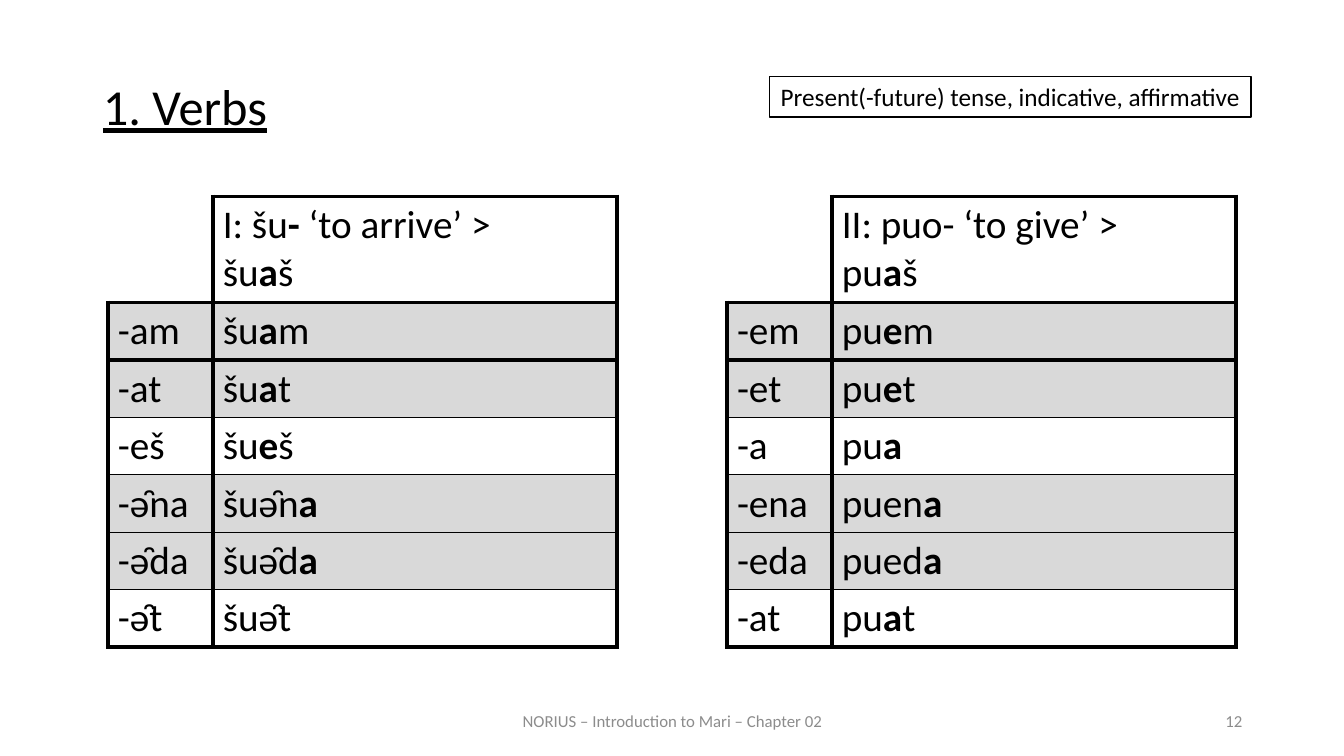
from lxml import etree
from pptx import Presentation
from pptx.dml.color import RGBColor
from pptx.enum.shapes import MSO_SHAPE
from pptx.enum.text import MSO_ANCHOR, PP_ALIGN
from pptx.oxml.ns import qn
from pptx.util import Inches, Pt

LEFT, MID, RIGHT, JUST = PP_ALIGN.LEFT, PP_ALIGN.CENTER, PP_ALIGN.RIGHT, PP_ALIGN.JUSTIFY
TOP, CENTER = MSO_ANCHOR.TOP, MSO_ANCHOR.MIDDLE
RECT = MSO_SHAPE.RECTANGLE

COLORS = {"ink": "000000", "paper": "FFFFFF", "shade": "D9D9D9", "foot": "8C8C8C"}
THICK, THIN = 3, 1
SHADED = {1, 2, 4, 5}

ARRIVE = [
    ("", "I: šu*-* ‘to arrive’ >\nšu*a*š"),
    ("-am", "šu*a*m"),
    ("-at", "šu*a*t"),
    ("-eš", "šu*e*š"),
    ("-ə̑na", "šuə̑n*a*"),
    ("-ə̑da", "šuə̑d*a*"),
    ("-ə̑t", "šuə̑t"),
]
GIVE = [
    ("", "II: puo- ‘to give’ >\npu*a*š"),
    ("-em", "pu*e*m"),
    ("-et", "pu*e*t"),
    ("-a", "pu*a*"),
    ("-ena", "puen*a*"),
    ("-eda", "pued*a*"),
    ("-at", "pu*a*t"),
]


class Deck:
    font = "Calibri"

    def __init__(self):
        self.prs = Presentation()
        self.prs.slide_width = Inches(13.33)
        self.prs.slide_height = Inches(7.5)
        self.slide = self.prs.slides.add_slide(self.prs.slide_layouts[5])

    def color(self, name):
        return RGBColor.from_string(COLORS[name])

    def put(self, frame, text, size, ink="ink", align=LEFT):
        for row, line in enumerate(text.split("\n")):
            para = frame.add_paragraph() if row else frame.paragraphs[0]
            para.alignment = align
            for part, words in enumerate(line.split("*")):
                if words:
                    run = para.add_run()
                    run.text = words
                    run.font.name = self.font
                    run.font.size = Pt(size)
                    run.font.bold = part % 2 == 1
                    run.font.color.rgb = self.color(ink)

    def title(self, text, box):
        head = self.slide.shapes.title
        head.left, head.top, head.width, head.height = map(Inches, box)
        frame = head.text_frame
        frame.vertical_anchor = TOP
        self.put(frame, text, 36, align=JUST)
        para = frame.paragraphs[0]
        para.line_spacing = 0.9
        para.space_before = Pt(12)
        para.runs[0].font.underline = True

    def label(self, text, box, align):
        frame = self.slide.shapes.add_textbox(*map(Inches, box)).text_frame
        frame.word_wrap = True
        frame.vertical_anchor = CENTER
        self.put(frame, text, 12, "foot", align)

    def badge(self, text, box):
        shape = self.slide.shapes.add_shape(RECT, *map(Inches, box))
        shape.shadow.inherit = False
        shape.fill.solid()
        shape.fill.fore_color.rgb = self.color("paper")
        shape.line.color.rgb = self.color("ink")
        shape.line.width = Pt(1)
        shape.text_frame.word_wrap = False
        self.put(shape.text_frame, text, 18, align=MID)

    def edge(self, cell, side, width):
        props = cell._tc.get_or_add_tcPr()
        line = etree.SubElement(props, qn("a:ln" + side), w=str(Pt(width)))
        if width:
            fill = etree.SubElement(line, qn("a:solidFill"))
            etree.SubElement(fill, qn("a:srgbClr"), val=COLORS["ink"])
        else:
            etree.SubElement(line, qn("a:noFill"))

    def table(self, rows, left, top):
        last = len(rows) - 1
        frame = self.slide.shapes.add_table(
            len(rows), 2, Inches(left), Inches(top), Inches(5.05), Inches(4.47))
        grid = frame.table
        grid.first_row = grid.horz_banding = False
        for col, width in enumerate((1.04, 4.01)):
            grid.columns[col].width = Inches(width)
        for row, texts in enumerate(rows):
            grid.rows[row].height = Inches(0.57 if row else 1.05)
            for col, text in enumerate(texts):
                cell = grid.cell(row, col)
                blank = row == 0 and col == 0
                above = THICK if row < 3 else THIN
                below = THICK if row < 2 or row == last else THIN
                self.edge(cell, "L", 0 if blank else THICK)
                self.edge(cell, "R", THICK)
                self.edge(cell, "T", 0 if blank else above)
                self.edge(cell, "B", below)
                if row in SHADED:
                    cell.fill.solid()
                    cell.fill.fore_color.rgb = self.color("shade")
                else:
                    cell.fill.background()
                self.put(cell.text_frame, text, 28)

    def save(self):
        self.prs.save("out.pptx")


def main():
    deck = Deck()
    deck.title("1. Verbs", (0.92, 0.76, 6.5, 0.8))
    deck.label("NORIUS – Introduction to Mari – Chapter 02", (4.42, 6.95, 4.5, 0.4), MID)
    deck.label("12", (9.42, 6.95, 3, 0.4), RIGHT)
    for rows, left in ((ARRIVE, 1.07), (GIVE, 7.21)):
        deck.table(rows, left, 1.95)
    deck.badge("Present(-future) tense, indicative, affirmative", (7.63, 0.76, 4.78, 0.4))
    deck.save()


if __name__ == "__main__":
    main()
